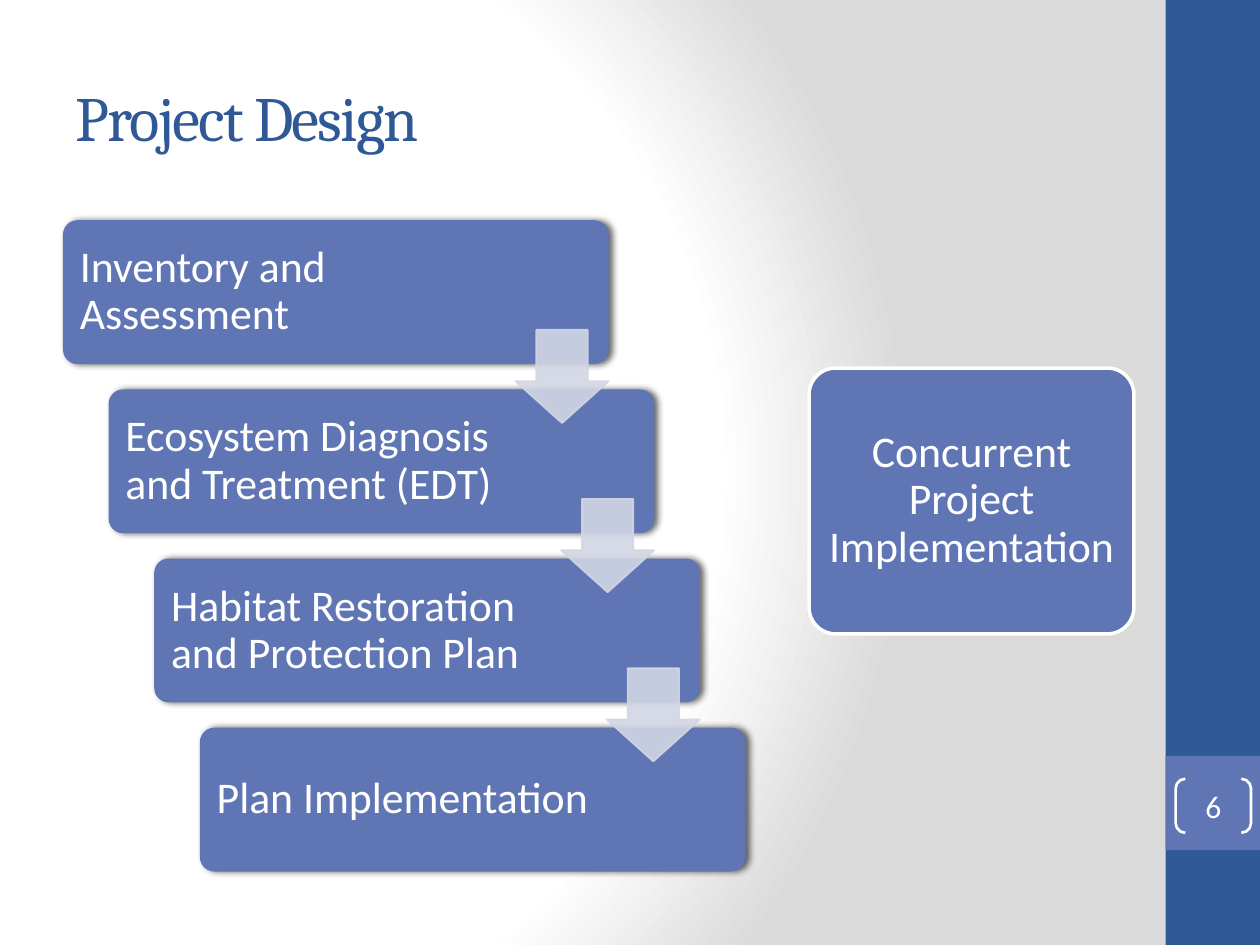
"""Build the Project Design slide with its staircase of planning steps."""
from lxml import etree
from pptx import Presentation
from pptx import util as u
from pptx.dml.color import RGBColor
from pptx.enum import shapes, text
from pptx.oxml import ns

NAVY = RGBColor(0x2F, 0x58, 0x97)
BLUE = RGBColor(0x60, 0x76, 0xB4)
PALE = RGBColor(0xD2, 0xD6, 0xE5)
WHITE = RGBColor(0xFF, 0xFF, 0xFF)
GREY = RGBColor(0xDA, 0xDA, 0xDA)
BLACK = RGBColor(0, 0, 0)

STEPS = [
    "Inventory and Assessment",
    "Ecosystem Diagnosis and Treatment (EDT)",
    "Habitat Restoration and Protection Plan",
    "Plan Implementation",
]
STEP_X, STEP_Y = 0.92, 3.41
KIND = shapes.MSO_SHAPE


def add_node(parent, tag, **values):
    node = etree.SubElement(parent, ns.qn(tag))
    for name, value in values.items():
        node.set(name, str(value))
    return node


def set_all(target, values):
    for name, value in values.items():
        setattr(target, name, value)


class SlideBuilder:
    """Hold the style and the current slide."""

    body_font = {"name": "Calibri", "size": u.Pt(25)}
    title_font = {"name": "Cambria", "size": u.Pt(36)}

    def __init__(self, deck):
        self.page = deck.slides.add_slide(deck.slide_layouts[5])

    def background(self):
        fill = self.page.background.fill
        fill.gradient()
        grad = fill._xPr.find(ns.qn("a:gradFill"))
        for child in list(grad):
            grad.remove(child)
        stops = add_node(grad, "a:gsLst")
        for position, color in ((0, WHITE), (75, WHITE), (100, GREY)):
            stop = add_node(stops, "a:gs", pos=position * 1000)
            add_node(stop, "a:srgbClr", val=color)
        circle = add_node(grad, "a:path", path="circle")
        add_node(circle, "a:fillToRect", l=20000, t=50000, r=100000, b=50000)

    def fill_text(self, box, words, font, color, align, inset, spacing=1.0):
        frame = box.text_frame
        set_all(frame, {
            "word_wrap": True,
            "auto_size": text.MSO_AUTO_SIZE.NONE,
            "vertical_anchor": text.MSO_ANCHOR.MIDDLE,
            "margin_left": u.Cm(inset[0]), "margin_right": u.Cm(inset[0]),
            "margin_top": u.Cm(inset[1]), "margin_bottom": u.Cm(inset[1]),
        })
        para = frame.paragraphs[0]
        set_all(para, {"alignment": align, "line_spacing": spacing})
        span = para.add_run()
        span.text = words
        set_all(span.font, font)
        span.font.color.rgb = color
        return span

    def title(self, words, *area):
        box = self.page.shapes.title
        set_all(box, dict(zip(("left", "top", "width", "height"), map(u.Cm, area))))
        span = self.fill_text(box, words, self.title_font, NAVY,
                              text.PP_ALIGN.LEFT, (0.25, 0.13))
        span.font._element.set("spc", "-100")

    def label(self, words, *area, align=text.PP_ALIGN.LEFT, inset=(0.25, 0.25)):
        box = self.page.shapes.add_textbox(*map(u.Cm, area))
        self.fill_text(box, words, self.body_font, WHITE, align, inset, 0.9)

    def shape(self, kind, *area, fill=None, line=None, weight=1, adjust=(), alpha=None):
        box = self.page.shapes.add_shape(kind, *map(u.Cm, area))
        box.shadow.inherit = False
        for index, value in enumerate(adjust):
            box.adjustments[index] = value
        for target, color in ((box.fill, fill), (box.line.fill, line)):
            if color is None:
                target.background()
            else:
                target.solid()
                target.fore_color.rgb = color
        if line is not None:
            box.line.width = u.Pt(weight)
        if alpha:
            for color in box._element.spPr.iter(ns.qn("a:srgbClr")):
                add_node(color, "a:alpha", val=alpha * 1000)
        return box

    def step(self, words, left, top):
        box = self.shape(KIND.ROUNDED_RECTANGLE, left, top, 11, 2.9,
                         fill=BLUE, adjust=(0.1,))
        effects = box._element.spPr.find(ns.qn("a:effectLst"))
        shadow = add_node(effects, "a:outerShdw", blurRad=u.Pt(4), dist=u.Pt(2),
                          dir=0, algn="ctr", rotWithShape=0)
        color = add_node(shadow, "a:srgbClr", val=BLACK)
        add_node(color, "a:alpha", val=60000)
        self.label(words, left + 0.09, top + 0.09, 8.03, 2.72)

    def arrow(self, left, top):
        self.shape(KIND.DOWN_ARROW, left, top, 1.88, 1.88, fill=PALE, line=PALE,
                   adjust=(0.55, 0.45), alpha=90)

    def page_number(self, words, *area):
        box = self.shape(KIND.DOUBLE_BRACKET, *area, line=WHITE, weight=1.5,
                         adjust=(0.179,))
        self.fill_text(box, words, {**self.body_font, "size": u.Pt(18)}, WHITE,
                       text.PP_ALIGN.CENTER, (0, 0))


def main():
    deck = Presentation()
    set_all(deck, {"slide_width": u.Cm(25.4), "slide_height": u.Cm(19.05)})
    slide = SlideBuilder(deck)
    slide.background()
    slide.shape(KIND.RECTANGLE, 23.5, 0, 1.9, 19.05, fill=NAVY)
    slide.shape(KIND.RECTANGLE, 23.5, 15.24, 1.9, 1.9, fill=BLUE)
    slide.title("Project Design", 1.27, 0.76, 21.16, 3.18)
    for index, words in enumerate(STEPS):
        slide.step(words, 1.27 + index * STEP_X, 4.44 + index * STEP_Y)
    for index in range(len(STEPS) - 1):
        slide.arrow(10.39 + index * STEP_X, 6.65 + index * STEP_Y)
    slide.page_number("6", 23.7, 15.7, 1.52, 1.09)
    slide.shape(KIND.ROUNDED_RECTANGLE, 16.31, 7.42, 6.55, 5.36,
                fill=BLUE, line=WHITE, weight=2, adjust=(0.1,))
    slide.label("Concurrent Project Implementation", 16.46, 7.57, 6.25, 5.05,
                align=text.PP_ALIGN.CENTER, inset=(0.13, 0.08))
    deck.save("out.pptx")


if __name__ == "__main__":
    main()
